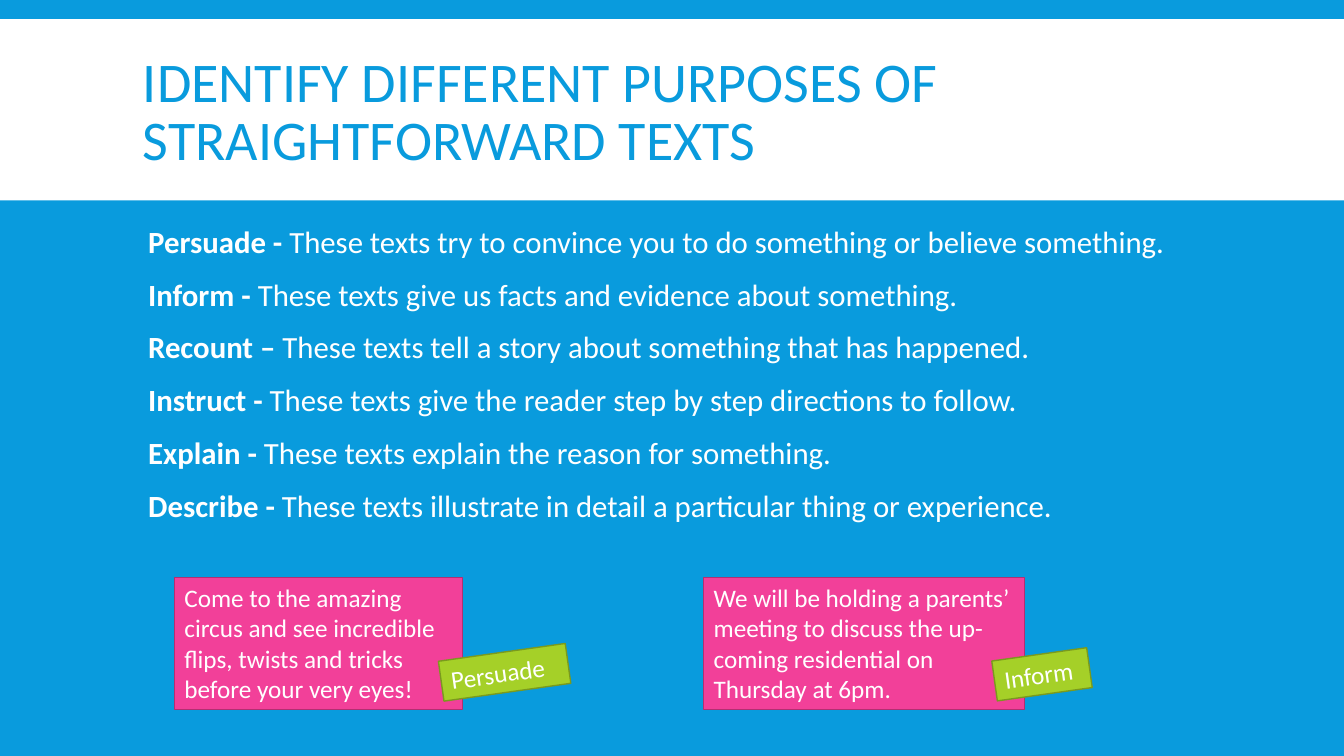
from pptx import Presentation
from pptx.dml.color import RGBColor
from pptx.enum.shapes import MSO_SHAPE
from pptx.enum.text import MSO_ANCHOR, MSO_AUTO_SIZE, PP_ALIGN
from pptx.util import Inches, Pt

BLUE, WHITE = "099BDD", "FFFFFF"
PINK, PINK_EDGE = "F24099", "B32F71"
GREEN, GREEN_EDGE = "A5D028", "7A9A1E"

deck = Presentation()
deck.slide_width, deck.slide_height = Inches(13.33), Inches(7.5)
column, row = deck.slide_width / 100, deck.slide_height / 100
page = deck.slides.add_slide(deck.slide_layouts[6])


def paint(color_format, color):
    color_format.rgb = RGBColor.from_string(color)


def write(para, text, size, color, bold=False):
    span = para.add_run()
    span.text = text
    span.font.name = "Calibri"
    span.font.size = Pt(size)
    span.font.bold = bold
    paint(span.font.color, color)


page.background.fill.solid()
paint(page.background.fill.fore_color, BLUE)

band = page.shapes.add_shape(
    MSO_SHAPE.RECTANGLE, 0, int(2.53 * row), deck.slide_width, int(24 * row))
band.shadow.inherit = False
band.fill.solid()
paint(band.fill.fore_color, WHITE)
band.line.fill.background()

text_left, text_width = int(9.9 * column), int(80.25 * column)

title = page.shapes.add_textbox(text_left, int(4.13 * row), text_width, int(22 * row))
title.text_frame.word_wrap = True
title.text_frame.vertical_anchor = MSO_ANCHOR.MIDDLE
para = title.text_frame.paragraphs[0]
para.line_spacing = 0.85
write(para, "IDENTIFY DIFFERENT PURPOSES OF STRAIGHTFORWARD TEXTS", 40, BLUE)

purposes = [
    ("Persuade -", " These texts try to convince you to do something or believe something."),
    ("Inform - ", "These texts give us facts and evidence about something."),
    ("Recount – ", "These texts tell a story about something that has happened."),
    ("Instruct - ", "These texts give the reader step by step directions to follow."),
    ("Explain - ", "These texts explain the reason for something."),
    ("Describe - ", "These texts illustrate in detail a particular thing or experience."),
]
body = page.shapes.add_textbox(text_left, int(29.33 * row), text_width, int(44.53 * row))
frame = body.text_frame
frame.word_wrap = True
frame.margin_left = Inches(0.15)
for index, (purpose, meaning) in enumerate(purposes):
    para = frame.add_paragraph() if index else frame.paragraphs[0]
    para.line_spacing = 0.9
    para.space_before, para.space_after = Pt(12), Pt(2)
    write(para, purpose, 22, WHITE, bold=True)
    write(para, meaning, 22, WHITE)

card_top, card_height, tag_height = 76.4, 17.47, 5.33
labels = [
    ("Come to the amazing circus and see incredible flips, twists and tricks "
     "before your very eyes!", 12.98, card_top, 21.45, card_height, 0, PINK, PINK_EDGE),
    ("We will be holding a parents’ meeting to discuss the up-coming residential "
     "on Thursday at 6pm.", 52.36, card_top, 23.86, card_height, 0, PINK, PINK_EDGE),
    ("Persuade", 32.78, 86.27, 9.53, tag_height, -8, GREEN, GREEN_EDGE),
    ("Inform", 73.97, 86.53, 7.13, tag_height, -8, GREEN, GREEN_EDGE),
]
for text, left, top, width, height, angle, color, edge in labels:
    box = page.shapes.add_shape(
        MSO_SHAPE.RECTANGLE, int(left * column), int(top * row),
        int(width * column), int(height * row))
    box.shadow.inherit = False
    box.rotation = angle
    box.fill.solid()
    paint(box.fill.fore_color, color)
    paint(box.line.color, edge)
    box.line.width = Pt(1)
    frame = box.text_frame
    frame.word_wrap = True
    frame.auto_size = MSO_AUTO_SIZE.SHAPE_TO_FIT_TEXT
    frame.vertical_anchor = MSO_ANCHOR.TOP
    para = frame.paragraphs[0]
    para.alignment = PP_ALIGN.LEFT
    write(para, text, 18, WHITE)

deck.save("out.pptx")
